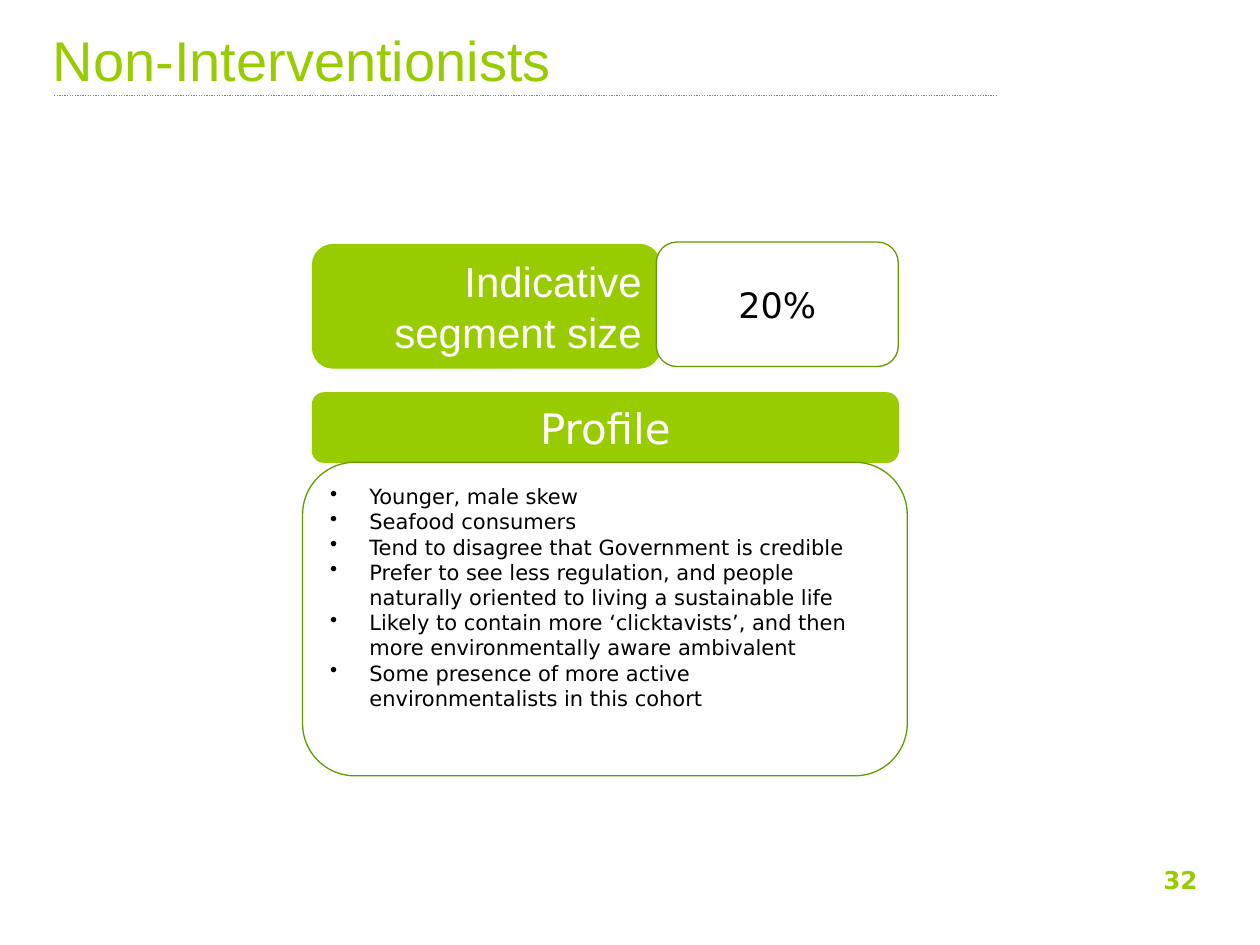
import pptx
import pptx.dml.color
import pptx.enum.dml
import pptx.enum.shapes
import pptx.enum.text
import pptx.oxml
import pptx.oxml.ns
import pptx.util

Cm = pptx.util.Cm
Pt = pptx.util.Pt
RGB = pptx.dml.color.RGBColor.from_string
ALIGN = pptx.enum.text.PP_ALIGN
ANCHOR = pptx.enum.text.MSO_ANCHOR

theme = {
    "lime": RGB("99CC00"),
    "green": RGB("669900"),
    "grey": RGB("808080"),
    "white": RGB("FFFFFF"),
    "black": RGB("000000"),
    "heading_font": "Arial",
    "body_font": "DejaVu Sans",
    "title": Pt(32),
    "label": Pt(24),
    "value": Pt(20),
    "number": Pt(14),
    "body": Pt(12),
    "line": Pt(0.75),
}


def write_text(shape, lines, size, font, color, align, anchor, bold=False, bullet=False):
    frame = shape.text_frame
    frame.text = "\n".join(lines)
    frame_format = {
        "word_wrap": True,
        "auto_size": pptx.enum.text.MSO_AUTO_SIZE.NONE,
        "vertical_anchor": anchor,
    }
    for name, value in frame_format.items():
        setattr(frame, name, value)
    for paragraph in frame.paragraphs:
        paragraph.alignment = align
        if bullet:
            properties = paragraph._p.get_or_add_pPr()
            properties.set("marL", str(Cm(0.79)))
            properties.set("indent", str(-Cm(0.79)))
            mark = pptx.oxml.parse_xml(
                f'<a:buChar {pptx.oxml.ns.nsdecls("a")} char="•"/>'
            )
            properties.append(mark)
        for run in paragraph.runs:
            run_format = {"size": theme[size], "name": theme[font], "bold": bold}
            for name, value in run_format.items():
                setattr(run.font, name, value)
            run.font.color.rgb = theme[color]


presentation = pptx.Presentation()
presentation.slide_width = Cm(25.4)
presentation.slide_height = Cm(19.05)
slide = presentation.slides.add_slide(presentation.slide_layouts[5])

rule = slide.shapes.add_connector(
    pptx.enum.shapes.MSO_CONNECTOR.STRAIGHT, Cm(1.09), Cm(1.93), Cm(20.09), Cm(1.93)
)
rule.line.color.rgb = theme["grey"]
rule.line.width = theme["line"]
rule.line.dash_style = pptx.enum.dml.MSO_LINE.ROUND_DOT
rule._element.spPr.append(
    pptx.oxml.parse_xml(f'<a:effectLst {pptx.oxml.ns.nsdecls("a")}/>')
)

title = slide.shapes.title
title_place = {"left": Cm(0.81), "top": Cm(0.05), "width": Cm(18.64), "height": Cm(2.29)}
for name, value in title_place.items():
    setattr(title, name, value)
write_text(title, ["Non-Interventionists"], "title", "heading_font", "lime",
           ALIGN.LEFT, ANCHOR.MIDDLE)

profile_points = [
    "Younger, male skew",
    "Seafood consumers",
    "Tend to disagree that Government is credible",
    "Prefer to see less regulation, and people naturally oriented to living a sustainable life",
    "Likely to contain more ‘clicktavists’, and then more environmentally aware ambivalent",
    "Some presence of more active environmentalists in this cohort",
]

panels = [
    ((6.3, 7.92, 11.81, 1.4), "lime", "lime",
     (["Profile"], "label", "body_font", "white", ALIGN.CENTER, ANCHOR.MIDDLE)),
    ((6.1, 9.32, 12.19, 6.32), "white", "green",
     (profile_points, "body", "body_font", "black", ALIGN.LEFT, ANCHOR.TOP, False, True)),
    ((6.3, 4.93, 7.01, 2.49), "lime", "lime",
     (["Indicative segment size"], "label", "heading_font", "white", ALIGN.RIGHT, ANCHOR.MIDDLE)),
    ((13.23, 4.88, 4.88, 2.51), "white", "green",
     (["20%"], "value", "body_font", "black", ALIGN.CENTER, ANCHOR.MIDDLE)),
]
for place, fill, outline, text in panels:
    panel = slide.shapes.add_shape(
        pptx.enum.shapes.MSO_SHAPE.ROUNDED_RECTANGLE, *map(Cm, place)
    )
    panel.shadow.inherit = False
    panel.fill.solid()
    panel.fill.fore_color.rgb = theme[fill]
    panel.line.color.rgb = theme[outline]
    panel.line.width = theme["line"]
    write_text(panel, *text)

slide_number = slide.shapes.add_textbox(Cm(18.47), Cm(17.32), Cm(5.92), Cm(1.32))
write_text(slide_number, ["32"], "number", "body_font", "lime",
           ALIGN.RIGHT, ANCHOR.TOP, bold=True)

presentation.save("out.pptx")
